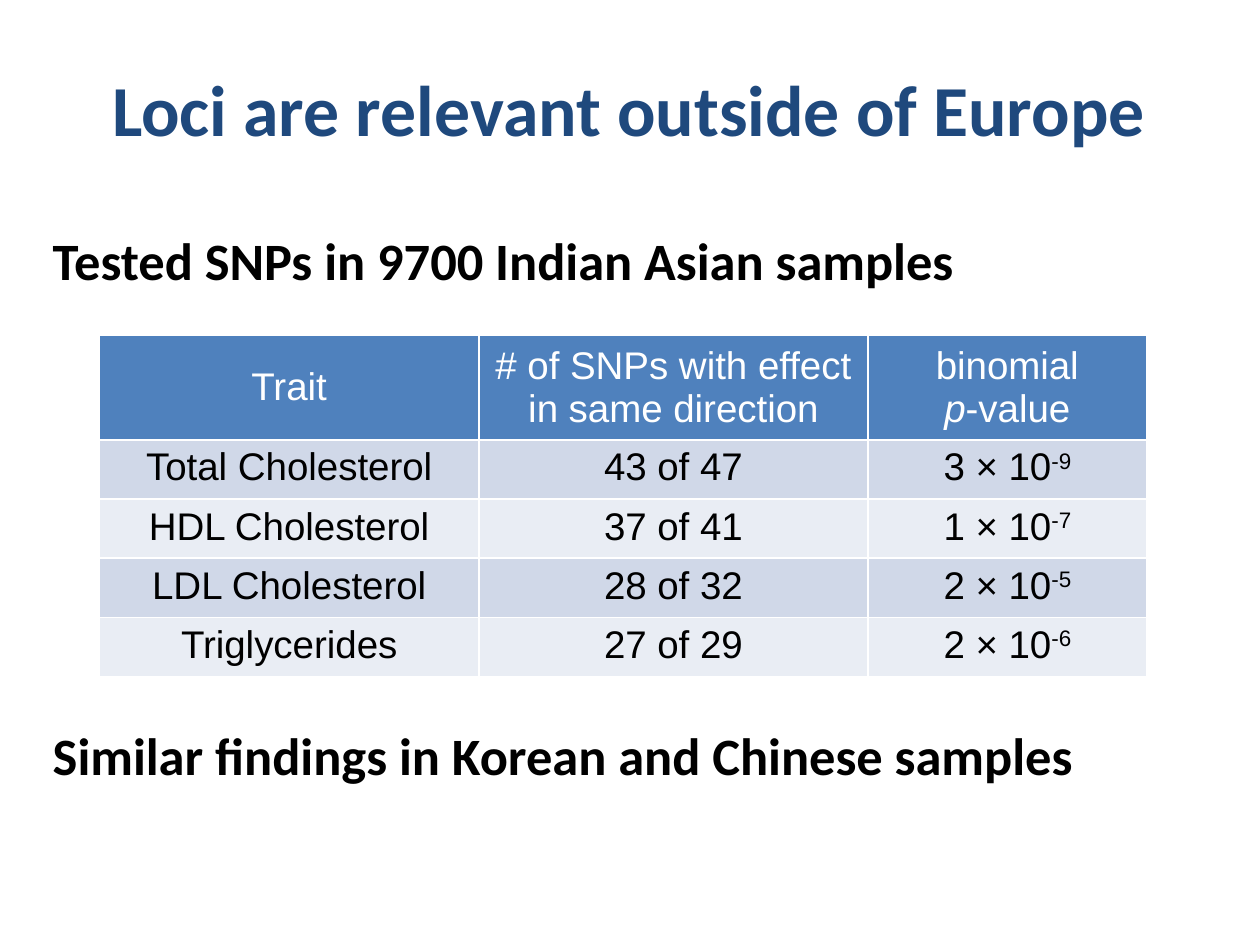
from dataclasses import dataclass

from lxml import etree
from pptx import Presentation
from pptx.dml.color import RGBColor
from pptx.enum.text import MSO_ANCHOR, PP_ALIGN
from pptx.oxml import parse_xml
from pptx.oxml.ns import nsdecls, qn
from pptx.util import Inches, Pt

CENTER, LEFT = PP_ALIGN.CENTER, PP_ALIGN.LEFT
MIDDLE, TOP = MSO_ANCHOR.MIDDLE, MSO_ANCHOR.TOP
TITLE_ONLY = 5


@dataclass(frozen=True)
class Theme:
    heading_font: str = "Calibri"
    table_font: str = "Arial"
    title_color: str = "1F497D"
    text_color: str = "000000"
    header_text: str = "FFFFFF"
    header_fill: str = "4F81BD"
    band_fills: tuple = ("D0D8E8", "E9EDF4")
    border_color: str = "FFFFFF"
    shadow_color: str = "000000"
    title_size: int = 41
    body_size: int = 30
    table_size: int = 22


class SlideBuilder:
    def __init__(self, presentation, theme):
        self.theme = theme
        layout = presentation.slide_layouts[TITLE_ONLY]
        self.slide = presentation.slides.add_slide(layout)

    def add_run(self, paragraph, text, color, superscript=False, **font_values):
        run = paragraph.add_run()
        run.text = text
        run.font.color.rgb = RGBColor.from_string(color)
        for name, value in font_values.items():
            setattr(run.font, name, value)
        if superscript:
            run._r.get_or_add_rPr().set("baseline", "30000")
        return run

    def format_frame(self, frame, anchor):
        values = {
            "word_wrap": True,
            "vertical_anchor": anchor,
            "margin_left": Inches(0.1),
            "margin_right": Inches(0.1),
            "margin_top": Inches(0.05),
            "margin_bottom": Inches(0.05),
        }
        for name, value in values.items():
            setattr(frame, name, value)

    def place(self, shape, left, top, width, height):
        values = {"left": left, "top": top, "width": width, "height": height}
        for name, value in values.items():
            setattr(shape, name, Inches(value))

    def add_title(self, text, box):
        theme = self.theme
        title = self.slide.shapes.title
        self.place(title, *box)
        self.format_frame(title.text_frame, MIDDLE)
        paragraph = title.text_frame.paragraphs[0]
        paragraph.alignment = CENTER
        run = self.add_run(paragraph, text, theme.title_color, bold=True,
                           name=theme.heading_font, size=Pt(theme.title_size))
        effects = parse_xml(
            f'<a:effectLst {nsdecls("a")}>'
            '<a:outerShdw blurRad="38100" dist="38100" dir="2700000" algn="tl">'
            f'<a:srgbClr val="{theme.shadow_color}"><a:alpha val="43000"/></a:srgbClr>'
            '</a:outerShdw></a:effectLst>')
        run._r.get_or_add_rPr().find(qn("a:solidFill")).addnext(effects)

    def add_statements(self, statements, box, gap):
        theme = self.theme
        shape = self.slide.shapes.add_textbox(*map(Inches, box))
        frame = shape.text_frame
        self.format_frame(frame, TOP)
        for index, text in enumerate(statements):
            paragraph = frame.add_paragraph() if index else frame.paragraphs[0]
            values = {"alignment": LEFT, "line_spacing": 0.9,
                      "space_before": Pt(gap if index else 0)}
            for name, value in values.items():
                setattr(paragraph, name, value)
            self.add_run(paragraph, text, theme.text_color, bold=True,
                         name=theme.heading_font, size=Pt(theme.body_size))

    def add_borders(self, cell, widths):
        properties = cell._tc.get_or_add_tcPr()
        for side, width in widths.items():
            line = etree.SubElement(properties, qn(f"a:ln{side}"), w=str(Pt(width)))
            fill = etree.SubElement(line, qn("a:solidFill"))
            etree.SubElement(fill, qn("a:srgbClr"), val=self.theme.border_color)

    def fill_cell(self, cell, paragraphs, row_index):
        theme = self.theme
        header = row_index == 0
        self.add_borders(cell, {"L": 1, "R": 1,
                                "T": 1.5 if row_index == 1 else 1,
                                "B": 1.5 if header else 1})
        color = theme.header_fill if header else theme.band_fills[(row_index - 1) % 2]
        cell.fill.solid()
        cell.fill.fore_color.rgb = RGBColor.from_string(color)
        cell.vertical_anchor = MIDDLE if header else TOP
        frame = cell.text_frame
        for index, runs in enumerate(paragraphs):
            paragraph = frame.add_paragraph() if index else frame.paragraphs[0]
            paragraph.alignment = CENTER
            for text, values in runs:
                self.add_run(paragraph, text,
                             theme.header_text if header else theme.text_color,
                             name=theme.table_font, size=Pt(theme.table_size),
                             bold=False, **values)

    def add_table(self, rows, box, column_widths, row_heights):
        shape = self.slide.shapes.add_table(len(rows), len(column_widths),
                                            *map(Inches, box))
        table = shape.table
        for column, width in zip(table.columns, column_widths):
            column.width = Inches(width)
        for row, height in zip(table.rows, row_heights):
            row.height = Inches(height)
        for row_index, row in enumerate(rows):
            for column_index, paragraphs in enumerate(row):
                self.fill_cell(table.cell(row_index, column_index), paragraphs, row_index)


def plain(text):
    return [[(text, {})]]


def power_of_ten(factor, exponent):
    return [[(f"{factor} × 10", {}), (str(exponent), {"superscript": True})]]


def main():
    presentation = Presentation()
    presentation.slide_width = Inches(10)
    presentation.slide_height = Inches(7.5)
    builder = SlideBuilder(presentation, Theme())

    header = [
        plain("Trait"),
        plain("# of SNPs with effect in same direction"),
        [[("binomial", {})], [("p", {"italic": True}), ("-value", {})]],
    ]
    traits = [
        ("Total Cholesterol", 43, 47, 3, -9),
        ("HDL Cholesterol", 37, 41, 1, -7),
        ("LDL Cholesterol", 28, 32, 2, -5),
        ("Triglycerides", 27, 29, 2, -6),
    ]
    rows = [header] + [
        [plain(trait), plain(f"{matching} of {tested}"), power_of_ten(factor, exponent)]
        for trait, matching, tested, factor, exponent in traits
    ]

    builder.add_title("Loci are relevant outside of Europe", (0.46, 0.33, 9.07, 1.05))
    builder.add_table(rows, (0.79, 2.66, 8.31, 2.7), (3.01, 3.09, 2.21),
                      [0.83] + [0.47] * len(traits))
    builder.add_statements(
        ["Tested SNPs in 9700 Indian Asian samples",
         "Similar findings in Korean and Chinese samples"],
        (0.32, 1.82, 9.51, 4.98), gap=250)
    presentation.save("out.pptx")


if __name__ == "__main__":
    main()
